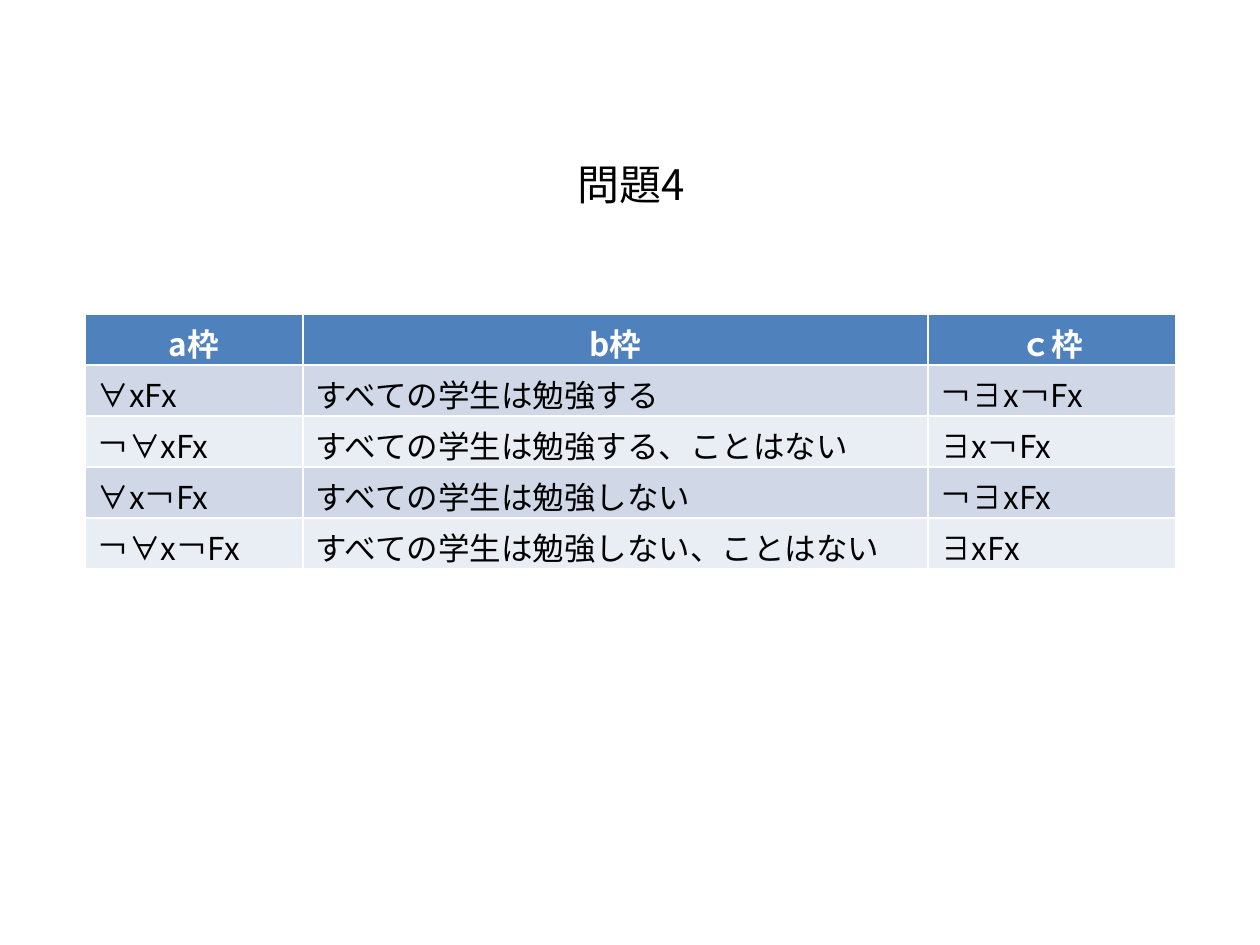
from lxml.etree import SubElement
from pptx import Presentation
from pptx.dml.color import RGBColor
from pptx.enum.text import MSO_AUTO_SIZE, PP_ALIGN
from pptx.oxml.ns import qn
from pptx.util import Inches, Pt

PX = Inches(1) // 126
FONT = "Noto Sans CJK JP"
BLACK = RGBColor(0, 0, 0)
WHITE = RGBColor(255, 255, 255)
BLUE = RGBColor(0x4F, 0x81, 0xBD)
BANDS = RGBColor(0xD0, 0xD8, 0xE8), RGBColor(0xE9, 0xED, 0xF4)

HEAD = ("a枠", "b枠", "ｃ枠")
ROWS = (
    ("∀xFx", "すべての学生は勉強する", "￢∃x￢Fx"),
    ("￢∀xFx", "すべての学生は勉強する、ことはない", "∃x￢Fx"),
    ("∀x￢Fx", "すべての学生は勉強しない", "￢∃xFx"),
    ("￢∀x￢Fx", "すべての学生は勉強しない、ことはない", "∃xFx"),
)


class Page:
    def __init__(self, deck, font):
        self.font = font
        self.slide = deck.slides.add_slide(deck.slide_layouts[6])

    def label(self, frame, text, size, color, bold=False, align=PP_ALIGN.LEFT):
        para = frame.paragraphs[0]
        para.text = text
        para.alignment = align
        font = para.font
        font.size, font.bold, font.name = Pt(size), bold, self.font
        font.color.rgb = color
        # East Asian face for the kanji and symbols
        props = para._p.pPr.find(qn("a:defRPr"))
        SubElement(props, qn("a:ea"), typeface=self.font)

    def text(self, x, y, w, h, text, size):
        box = self.slide.shapes.add_textbox(x * PX, y * PX, w * PX, h * PX)
        frame = box.text_frame
        frame.word_wrap = True
        frame.auto_size = MSO_AUTO_SIZE.SHAPE_TO_FIT_TEXT
        self.label(frame, text, size, BLACK)

    def table(self, x, y, widths, high, head, rows, size):
        lines = (head, *rows)
        table = self.slide.shapes.add_table(
            len(lines), len(widths), x * PX, y * PX,
            sum(widths) * PX, len(lines) * high * PX).table
        for col, width in zip(table.columns, widths):
            col.width = width * PX
        for r, line in enumerate(lines):
            table.rows[r].height = high * PX
            for c, text in enumerate(line):
                cell = table.cell(r, c)
                cell.fill.solid()
                if r == 0:
                    cell.fill.fore_color.rgb = BLUE
                    self.label(cell.text_frame, text, size, WHITE, True,
                               PP_ALIGN.CENTER)
                else:
                    cell.fill.fore_color.rgb = BANDS[(r - 1) % 2]
                    self.label(cell.text_frame, text, size, BLACK)


def main():
    deck = Presentation()
    deck.slide_width, deck.slide_height = 1260 * PX, 945 * PX
    page = Page(deck, FONT)

    # Title
    page.text(565, 152, 136, 63, "問題4", 24)

    # Formulas and their readings
    page.table(85, 314, (218, 625, 248), 51, HEAD, ROWS, 18)

    deck.save("out.pptx")


if __name__ == "__main__":
    main()
